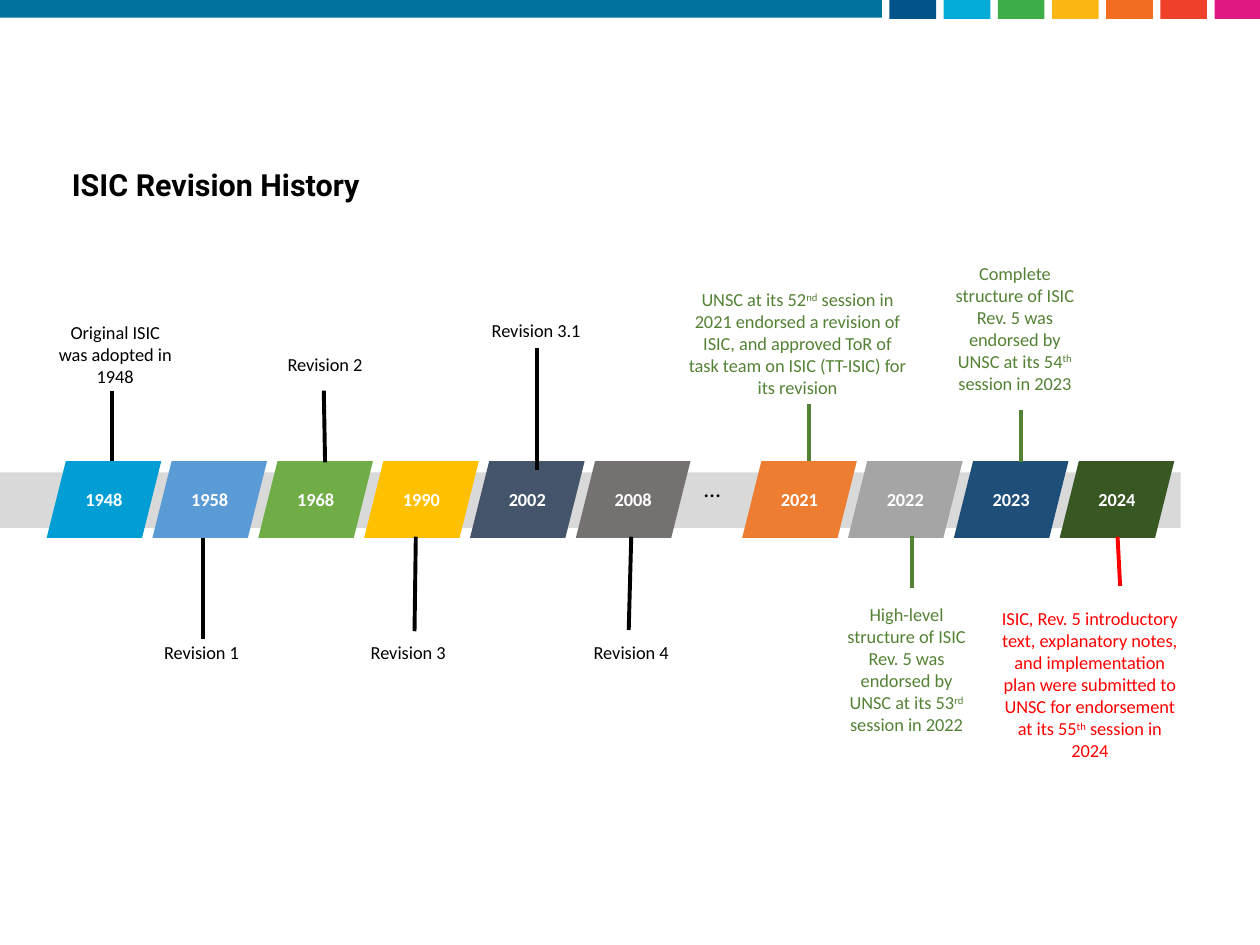
from pptx import Presentation
from pptx.dml.color import RGBColor
from pptx.enum.shapes import MSO_CONNECTOR, MSO_SHAPE
from pptx.enum.text import MSO_ANCHOR, MSO_AUTO_SIZE, PP_ALIGN
from pptx.oxml.ns import qn
from pptx.util import Inches, Pt

RECT, SLANT = MSO_SHAPE.RECTANGLE, MSO_SHAPE.PARALLELOGRAM
STRAIGHT = MSO_CONNECTOR.STRAIGHT
TOP, MIDDLE = MSO_ANCHOR.TOP, MSO_ANCHOR.MIDDLE
LEFT, CENTER = PP_ALIGN.LEFT, PP_ALIGN.CENTER
NO_FIT = MSO_AUTO_SIZE.NONE

BLACK = RGBColor(0x00, 0x00, 0x00)
WHITE = RGBColor(0xFF, 0xFF, 0xFF)
GREEN = RGBColor(0x54, 0x82, 0x35)
RED = RGBColor(0xFF, 0x00, 0x00)
BAND = RGBColor(0xD9, 0xD9, 0xD9)
HEADER = RGBColor(0x01, 0x71, 0x9D)
HEADER_TILES = [
    RGBColor(0x00, 0x54, 0x89), RGBColor(0x03, 0xAC, 0xD8),
    RGBColor(0x3D, 0xAD, 0x48), RGBColor(0xFD, 0xB7, 0x13),
    RGBColor(0xF3, 0x6D, 0x22), RGBColor(0xEF, 0x41, 0x2A),
    RGBColor(0xE0, 0x19, 0x83),
]

# Each run of years: left edge of the first block, then (year, colour)
YEAR_PITCH = 0.84
YEAR_RUNS = [
    (0.37, [("1948", RGBColor(0x00, 0x9E, 0xD5)),
            ("1958", RGBColor(0x5B, 0x9B, 0xD5)),
            ("1968", RGBColor(0x70, 0xAD, 0x47)),
            ("1990", RGBColor(0xFF, 0xC0, 0x00)),
            ("2002", RGBColor(0x44, 0x54, 0x6A)),
            ("2008", RGBColor(0x76, 0x71, 0x71))]),
    (5.89, [("2021", RGBColor(0xED, 0x7D, 0x31)),
            ("2022", RGBColor(0xA5, 0xA5, 0xA5)),
            ("2023", RGBColor(0x1F, 0x4E, 0x79)),
            ("2024", RGBColor(0x38, 0x57, 0x23))]),
]

# Label box, leader ends (x1, y1, x2, y2), colour, text pieces;
# every second piece is superscript
EVENTS = [
    ((0.36, 2.5, 1.11, 0.63), (0.89, 3.66, 0.89, 3.1), BLACK,
     ["Original ISIC was adopted in 1948"]),
    ((0.97, 5.04, 1.26, 0.28), (1.61, 5.07, 1.61, 4.27), BLACK, ["Revision 1"]),
    ((2.03, 2.75, 1.1, 0.28), (2.58, 3.67, 2.57, 3.1), BLACK, ["Revision 2"]),
    ((2.69, 5.04, 1.1, 0.28), (3.29, 5.01, 3.3, 4.26), BLACK, ["Revision 3"]),
    ((3.66, 2.48, 1.19, 0.28), (4.26, 3.73, 4.26, 2.76), BLACK, ["Revision 3.1"]),
    ((4.46, 5.04, 1.1, 0.28), (4.99, 5, 5.01, 4.26), BLACK, ["Revision 4"]),
    ((5.36, 2.24, 1.94, 0.98), (6.42, 3.66, 6.42, 3.21), GREEN,
     ["UNSC at its 52", "nd", " session in 2021 endorsed a revision of ISIC, and "
      "approved ToR of task team on ISIC (TT-ISIC) for its revision"]),
    ((6.6, 4.74, 1.19, 1.16), (7.24, 4.67, 7.24, 4.25), GREEN,
     ["High-level structure of ISIC Rev. 5 was endorsed by UNSC at its 53", "rd",
      " session in 2022"]),
    ((7.46, 2.03, 1.19, 1.16), (8.1, 3.67, 8.1, 3.25), GREEN,
     ["Complete structure of ISIC Rev. 5 was endorsed by UNSC at its 54", "th",
      " session in 2023"]),
    ((7.82, 4.77, 1.66, 1.34), (8.89, 4.65, 8.87, 4.26), RED,
     ["ISIC, Rev. 5 introductory text, explanatory notes, and implementation plan "
      "were submitted to UNSC for endorsement at its 55", "th", " session in 2024"]),
]


def add_run(p, text, color, size=10.5, bold=False, name="Calibri"):
    r = p.add_run()
    r.text = text
    for key, value in {"name": name, "size": Pt(size), "bold": bold}.items():
        setattr(r.font, key, value)
    r.font.color.rgb = color
    return r


def add_block(s, kind, box, color, text=None):
    shape = s.shapes.add_shape(kind, *map(Inches, box))
    shape.shadow.inherit = False
    shape.fill.solid()
    shape.fill.fore_color.rgb = color
    shape.line.fill.background()
    if text:
        tf = shape.text_frame
        tf.vertical_anchor = MIDDLE
        tf.paragraphs[0].alignment = CENTER
        add_run(tf.paragraphs[0], text, WHITE, bold=True)


def add_leader(s, ends, color):
    line = s.shapes.add_connector(STRAIGHT, *map(Inches, ends))
    line.line.color.rgb = color
    line.line.width = Pt(2.25)
    sp_pr = line._element.spPr
    sp_pr.append(sp_pr.makeelement(qn("a:effectLst"), {}))


def add_label(s, box, color, pieces, size=10.5, align=CENTER, wrap=True):
    tf = s.shapes.add_textbox(*map(Inches, box)).text_frame
    tf.word_wrap = wrap
    p = tf.paragraphs[0]
    p.alignment = align
    for i, piece in enumerate(pieces):
        r = add_run(p, piece, color, size)
        if i % 2:
            r.font._element.set("baseline", "30000")


def set_title(s, text):
    title = s.shapes.title
    box = {"left": 0.5, "top": 1.31, "width": 6.17, "height": 0.48}
    for key, value in box.items():
        setattr(title, key, Inches(value))
    tf = title.text_frame
    frame = {"margin_left": Inches(0.07), "margin_right": Inches(0.07),
             "margin_top": Inches(0.04), "margin_bottom": Inches(0.04),
             "vertical_anchor": TOP, "word_wrap": True, "auto_size": NO_FIT}
    for key, value in frame.items():
        setattr(tf, key, value)
    p = tf.paragraphs[0]
    p.alignment = LEFT
    p.line_spacing = 0.9
    add_run(p, text, BLACK, size=17.4, bold=True, name="Roboto")


def main():
    prs = Presentation()
    prs.slide_width, prs.slide_height = Inches(10), Inches(7.5)
    s = prs.slides.add_slide(prs.slide_layouts[5])

    # Header strip
    add_block(s, RECT, (0, 0, 7, 0.14), HEADER)
    for i, color in enumerate(HEADER_TILES):
        add_block(s, RECT, (7.06 + 0.43 * i, 0, 0.37, 0.15), color)

    set_title(s, "ISIC Revision History")

    # Timeline band and years
    add_block(s, RECT, (0, 3.75, 9.37, 0.44), BAND)
    for left, years in YEAR_RUNS:
        for i, (year, color) in enumerate(years):
            box = (left + YEAR_PITCH * i, 3.66, 0.91, 0.61)
            add_block(s, SLANT, box, color, year)
    add_label(s, (5.49, 3.71, 0.33, 0.33), BLACK, ["…"], 13.5, LEFT, wrap=False)

    # Events with their leaders
    for box, ends, color, pieces in EVENTS:
        add_leader(s, ends, color)
        add_label(s, box, color, pieces)

    prs.save("out.pptx")


if __name__ == "__main__":
    main()
